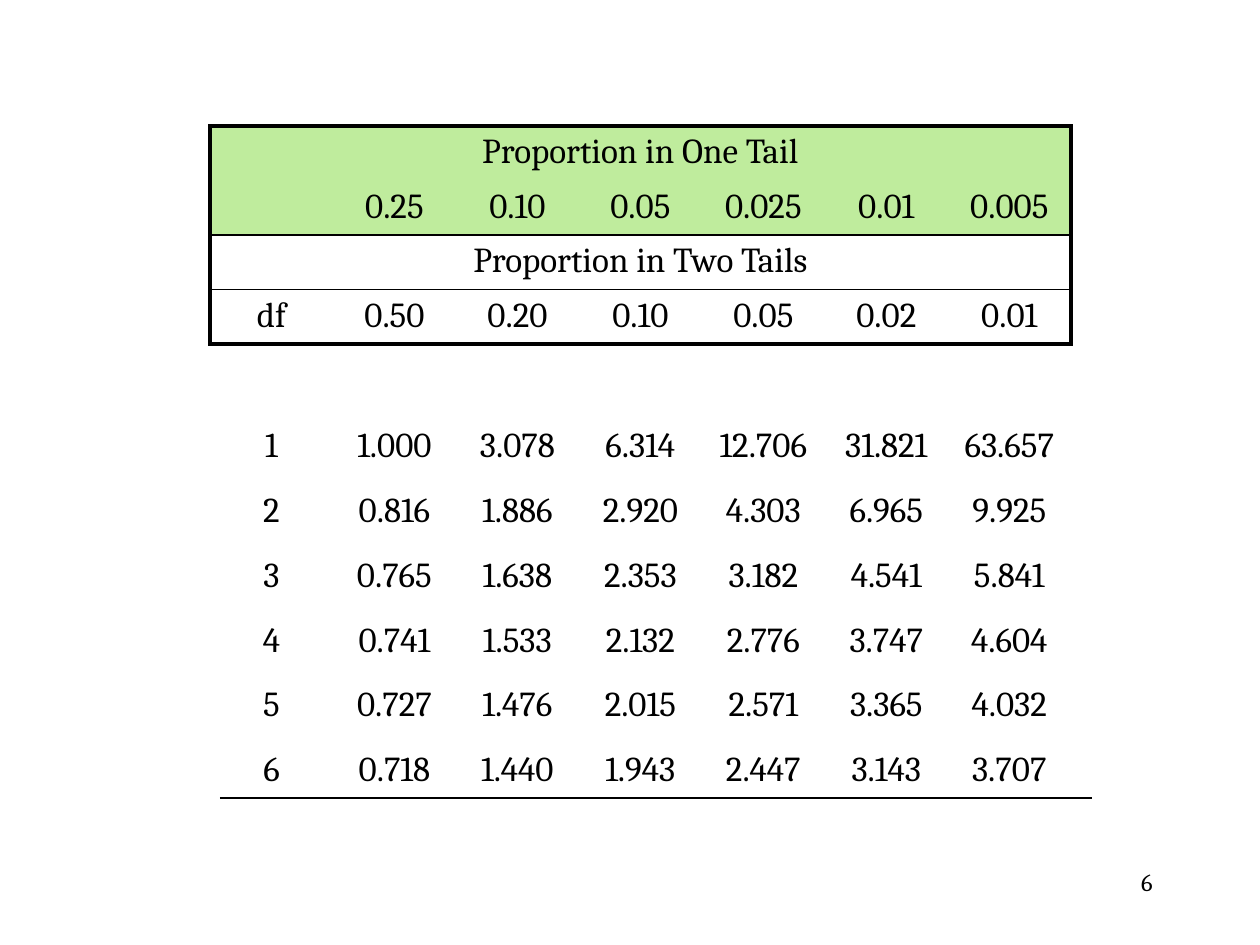
from lxml import etree
from pptx import Presentation
from pptx.dml.color import RGBColor
from pptx.enum.shapes import MSO_CONNECTOR
from pptx.enum.text import PP_ALIGN
from pptx.oxml import parse_xml
from pptx.oxml.ns import nsdecls, qn
from pptx.util import Emu, Pt

CENTER, RIGHT = PP_ALIGN.CENTER, PP_ALIGN.RIGHT
STRAIGHT = MSO_CONNECTOR.STRAIGHT
PLAIN_STYLE = "{2D5ABB26-0587-4C30-8999-92F81FD0307C}"
SCALE = 914400 / 126
THEME = {
    "font": "Cambria", "ink": "000000", "band": "BFEC9D",
    "table_size": 20, "number_size": 14,
    "frame_line": 2.25, "divider_line": 1, "rule_line": 0.75,
}


def px(*lengths):
    return [Emu(round(length * SCALE)) for length in lengths]


def style_text(paragraph, size, alignment):
    paragraph.alignment = alignment
    for run in paragraph.runs:
        run.font.name = THEME["font"]
        run.font.size = Pt(size)
        run.font.color.rgb = RGBColor.from_string(THEME["ink"])


presentation = Presentation()
presentation.slide_width, presentation.slide_height = px(1260, 945)
slide = presentation.slides.add_slide(presentation.slide_layouts[6])

heading_rows = [
    ["Proportion in One Tail"] + [""] * 6,
    ["", "0.25", "0.10", "0.05", "0.025", "0.01", "0.005"],
    ["Proportion in Two Tails"] + [""] * 6,
    ["df", "0.50", "0.20", "0.10", "0.05", "0.02", "0.01"],
]
critical_values = [
    ["1", "1.000", "3.078", "6.314", "12.706", "31.821", "63.657"],
    ["2", "0.816", "1.886", "2.920", "4.303", "6.965", "9.925"],
    ["3", "0.765", "1.638", "2.353", "3.182", "4.541", "5.841"],
    ["4", "0.741", "1.533", "2.132", "2.776", "3.747", "4.604"],
    ["5", "0.727", "1.476", "2.015", "2.571", "3.365", "4.032"],
    ["6", "0.718", "1.440", "1.943", "2.447", "3.143", "3.707"],
]

tables = []
for rows, top, height in [(heading_rows, 126, 218), (critical_values, 420, 389)]:
    frame = slide.shapes.add_table(len(rows), 7, *px(210, top, 861, height))
    table = frame.table
    table.first_row = table.horz_banding = False
    table._tbl.tblPr.find(qn("a:tableStyleId")).text = PLAIN_STYLE
    for row, values in zip(table.rows, rows):
        for cell, value in zip(row.cells, values):
            cell.text_frame.text = value
            style_text(cell.text_frame.paragraphs[0], THEME["table_size"], CENTER)
            cell.fill.background()
    tables.append(table)

heading_table = tables[0]
for row_index in (0, 2):
    heading_table.cell(row_index, 0).merge(heading_table.cell(row_index, 6))

for row_index, row in enumerate(heading_table.rows):
    for column_index, cell in enumerate(row.cells):
        borders = {}
        if column_index == 0:
            borders["lnL"] = THEME["frame_line"]
        if column_index == 6 or cell.is_merge_origin:
            borders["lnR"] = THEME["frame_line"]
        if row_index in (0, 2):
            borders["lnT"] = THEME["divider_line" if row_index else "frame_line"]
        if row_index in (1, 3):
            borders["lnB"] = THEME["divider_line" if row_index == 1 else "frame_line"]
        properties = cell._tc.get_or_add_tcPr()
        for position, (side, width) in enumerate(borders.items()):
            properties.insert(position, parse_xml(
                f'<a:{side} {nsdecls("a")} w="{Pt(width)}"><a:solidFill>'
                f'<a:srgbClr val="{THEME["ink"]}"/></a:solidFill></a:{side}>'))
        if row_index < 2:
            cell.fill.solid()
            cell.fill.fore_color.rgb = RGBColor.from_string(THEME["band"])

bottom_rule = slide.shapes.add_connector(STRAIGHT, *px(220, 798, 1092, 798))
bottom_rule.line.width = Pt(THEME["rule_line"])
bottom_rule.line.color.rgb = RGBColor.from_string(THEME["ink"])
etree.SubElement(bottom_rule._element.spPr, qn("a:effectLst"))

page_number = slide.shapes.add_textbox(*px(903, 861, 262, 63))
page_number.text_frame.word_wrap = True
page_number.text_frame.text = "6"
style_text(page_number.text_frame.paragraphs[0], THEME["number_size"], RIGHT)

presentation.save("out.pptx")
